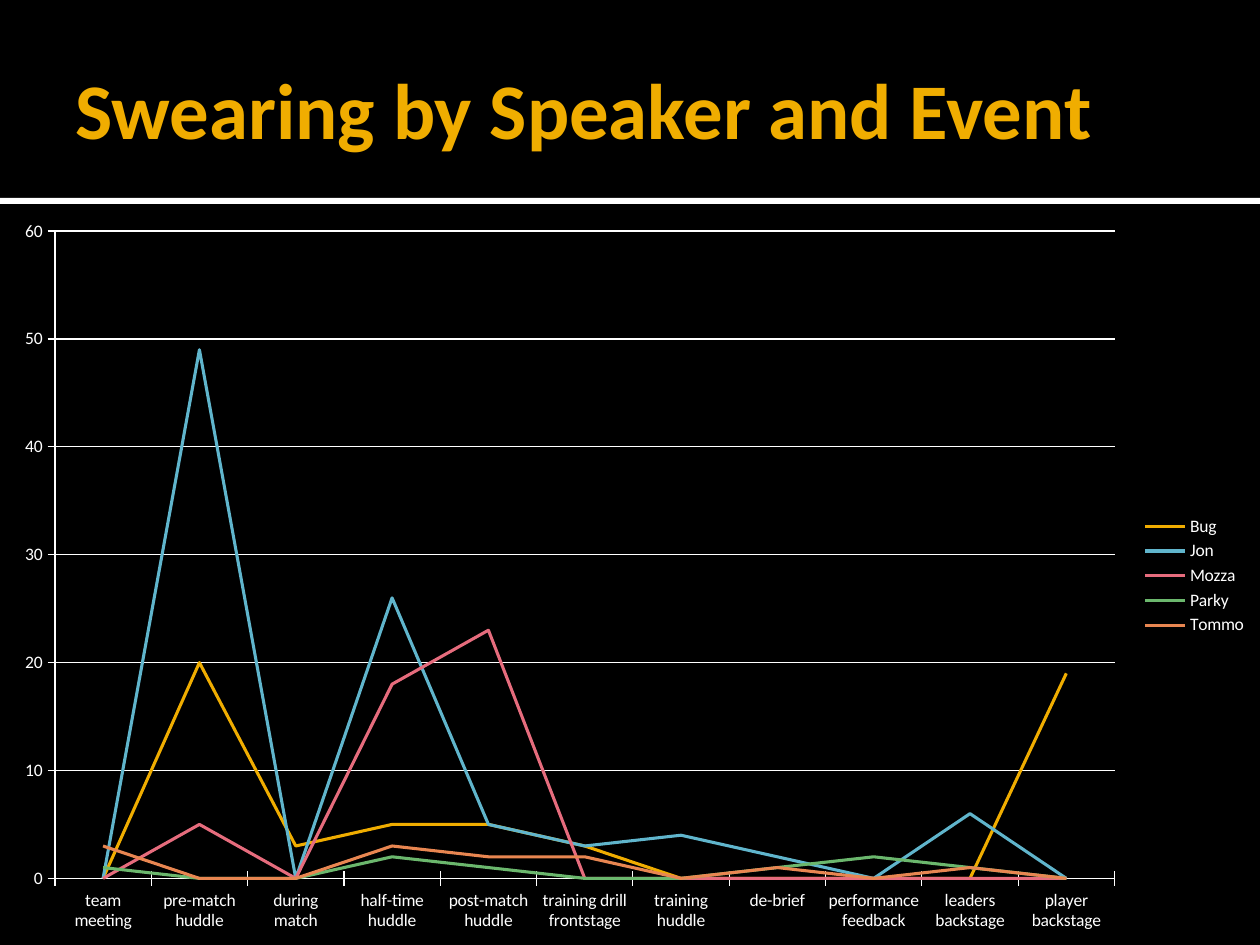
from typing import NamedTuple

from pptx import Presentation
from pptx.chart.data import CategoryChartData
from pptx.dml.color import RGBColor
from pptx.enum.chart import XL_CHART_TYPE, XL_LEGEND_POSITION, XL_TICK_MARK
from pptx.enum.shapes import MSO_SHAPE
from pptx.enum.text import MSO_ANCHOR
from pptx.util import Pt

RECTANGLE = MSO_SHAPE.RECTANGLE
MIDDLE = MSO_ANCHOR.MIDDLE
LINE_CHART = XL_CHART_TYPE.LINE
LEGEND_RIGHT = XL_LEGEND_POSITION.RIGHT
TICK_CROSS = XL_TICK_MARK.CROSS

FONT = "Calibri"
BLACK, WHITE, AMBER = "000000", "FFFFFF", "F0AD00"


class Band(NamedTuple):
    top: float
    height: float
    color: str


class Speaker(NamedTuple):
    name: str
    color: str
    values: tuple[int, ...]


PAGE_WIDTH, PAGE_HEIGHT = 720, 540
CHART_TOP = 118
BANDS = (Band(113, 3.6, WHITE), Band(0, 113, BLACK))
EVENTS = (
    "team meeting", "pre-match huddle", "during match", "half-time huddle",
    "post-match huddle", "training drill frontstage", "training huddle",
    "de-brief", "performance feedback", "leaders backstage", "player backstage",
)
SPEAKERS = (
    Speaker("Bug", AMBER, (0, 20, 3, 5, 5, 3, 0, 0, 0, 0, 19)),
    Speaker("Jon", "60B5CC", (0, 49, 0, 26, 5, 3, 4, 2, 0, 6, 0)),
    Speaker("Mozza", "E66C7D", (0, 5, 0, 18, 23, 0, 0, 0, 0, 0, 0)),
    Speaker("Parky", "6BB76D", (1, 0, 0, 2, 1, 0, 0, 1, 2, 1, 0)),
    Speaker("Tommo", "E88651", (3, 0, 0, 3, 2, 2, 0, 1, 0, 1, 0)),
)


def paint(fill, color: str) -> None:
    fill.solid()
    fill.fore_color.rgb = RGBColor.from_string(color)


def style_line(line, color: str, width: float) -> None:
    paint(line.fill, color)
    line.width = Pt(width)


def style_font(font, size: float, color: str, bold: bool = False) -> None:
    font.name = FONT
    font.size = Pt(size)
    font.bold = bold
    paint(font.fill, color)


def add_band(page, band: Band) -> None:
    shape = page.shapes.add_shape(
        RECTANGLE, 0, Pt(band.top), Pt(PAGE_WIDTH), Pt(band.height))
    shape.shadow.inherit = False
    paint(shape.fill, band.color)
    shape.line.fill.background()


def add_title(page, text: str) -> None:
    box = page.shapes.add_textbox(Pt(36), Pt(12.2), Pt(648), Pt(98.6))
    frame = box.text_frame
    frame.word_wrap = True
    frame.vertical_anchor = MIDDLE
    frame.margin_left = Pt(7.2)
    frame.margin_top = frame.margin_right = frame.margin_bottom = Pt(3.6)
    span = frame.paragraphs[0].add_run()
    span.text = text
    style_font(span.font, 45, AMBER, bold=True)


def add_swearing_chart(page) -> None:
    data = CategoryChartData()
    data.categories = EVENTS
    for speaker in SPEAKERS:
        data.add_series(speaker.name, speaker.values)
    chart = page.shapes.add_chart(
        LINE_CHART, 0, Pt(CHART_TOP), Pt(PAGE_WIDTH),
        Pt(PAGE_HEIGHT - CHART_TOP), data).chart
    chart.has_title = False
    style_font(chart.font, 10, WHITE)
    chart.has_legend = True
    chart.legend.position = LEGEND_RIGHT
    chart.legend.include_in_layout = False

    for axis in (chart.category_axis, chart.value_axis):
        axis.major_tick_mark = TICK_CROSS
        style_line(axis.format.line, WHITE, 0.75)
    values = chart.value_axis
    values.minimum_scale, values.maximum_scale, values.major_unit = 0, 60, 10
    values.has_major_gridlines = True
    style_line(values.major_gridlines.format.line, WHITE, 0.75)

    for series, speaker in zip(chart.plots[0].series, SPEAKERS):
        series.smooth = False
        style_line(series.format.line, speaker.color, 1.75)


def main() -> None:
    deck = Presentation()
    deck.slide_width, deck.slide_height = Pt(PAGE_WIDTH), Pt(PAGE_HEIGHT)
    page = deck.slides.add_slide(deck.slide_layouts[6])
    paint(page.background.fill, BLACK)
    for band in BANDS:
        add_band(page, band)
    add_title(page, "Swearing by Speaker and Event")
    add_swearing_chart(page)
    deck.save("out.pptx")


if __name__ == "__main__":
    main()
